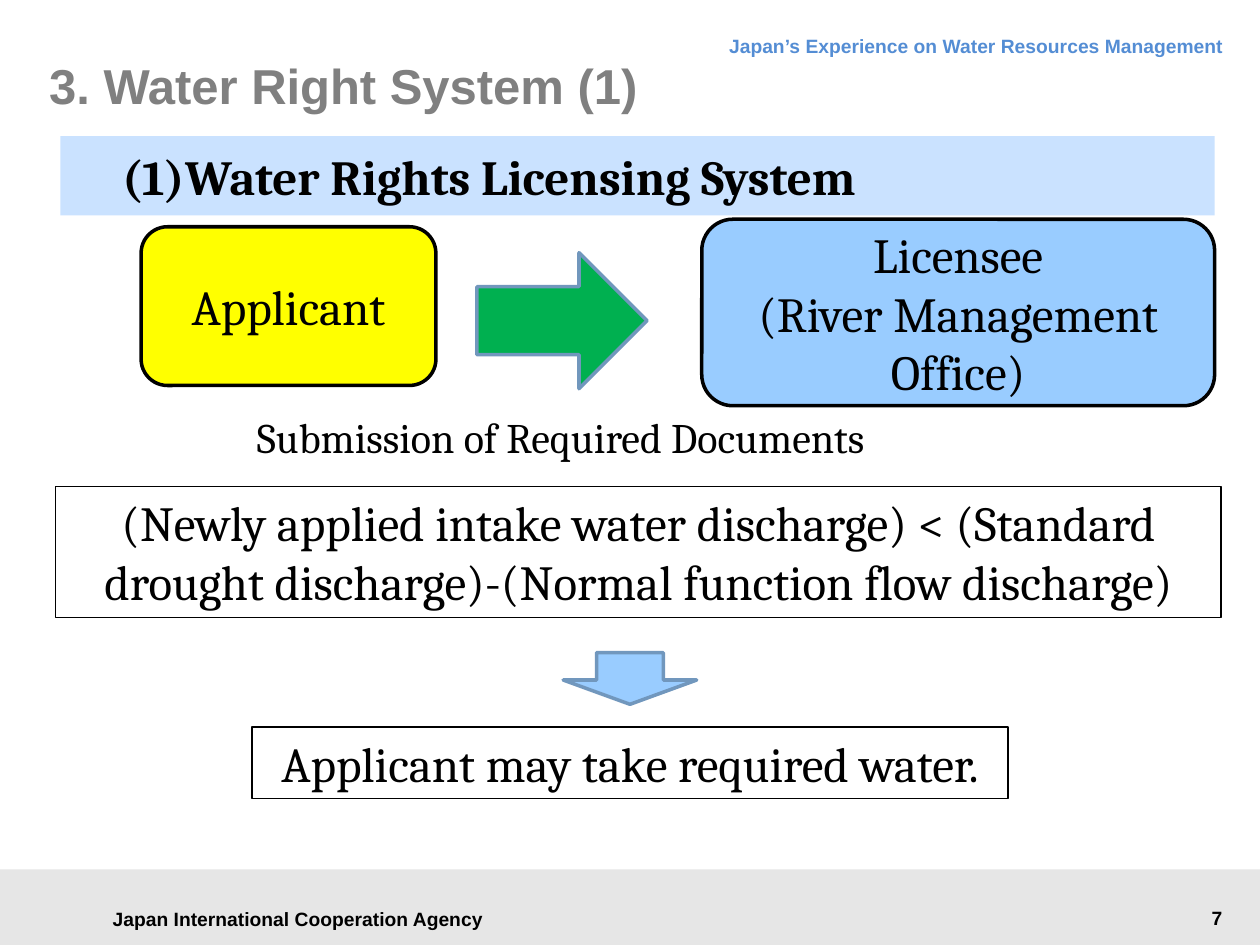
import pptx
import pptx.dml.color
import pptx.enum.shapes
import pptx.enum.text
import pptx.oxml
import pptx.oxml.ns
import pptx.util
from pptx.util import Inches

COLORS = {
    "black": "000000",
    "gray": "808080",
    "footer": "E6E6E6",
    "header": "548DD4",
    "banner": "CAE2FF",
    "sky": "99CCFF",
    "yellow": "FFFF00",
    "green": "00B050",
    "edge": "7197BD",
}
SHAPE = pptx.enum.shapes.MSO_SHAPE
ALIGN = pptx.enum.text.PP_ALIGN
ANCHOR = pptx.enum.text.MSO_ANCHOR
AUTO_SIZE = pptx.enum.text.MSO_AUTO_SIZE
BODY = {"name": "Cambria", "size": 28, "bold": False, "color": "black"}
LABEL = {"name": "Arial", "size": 11, "bold": True, "color": "black"}
MARGINS = (0.1, 0.05, 0.1, 0.05)


class SlideBuilder:
    def __init__(self, page):
        self.page = page

    def color(self, name):
        return pptx.dml.color.RGBColor.from_string(COLORS[name])

    def fill_text(self, box, lines, style=BODY, align=ALIGN.CENTER, anchor=ANCHOR.TOP,
                  margins=MARGINS, spacing=None, tab=None):
        frame = box.text_frame
        left, top, right, bottom = map(Inches, margins)
        frame_format = {
            "word_wrap": True, "auto_size": AUTO_SIZE.NONE, "vertical_anchor": anchor,
            "margin_left": left, "margin_top": top,
            "margin_right": right, "margin_bottom": bottom,
        }
        for name, value in frame_format.items():
            setattr(frame, name, value)
        for index, line in enumerate(lines):
            para = frame.paragraphs[0] if index == 0 else frame.add_paragraph()
            para.alignment = align
            if spacing:
                para.line_spacing = pptx.util.Pt(spacing)
            if tab:
                self.add_tab(para, tab)
            span = para.add_run()
            span.text = line
            font_format = {
                "name": style["name"], "size": pptx.util.Pt(style["size"]),
                "bold": style["bold"],
            }
            for name, value in font_format.items():
                setattr(span.font, name, value)
            span.font.color.rgb = self.color(style["color"])

    def add_tab(self, para, position):
        properties = para._p.get_or_add_pPr()
        properties.set("marL", str(Inches(0.06)))
        properties.set("indent", "0")
        tabs = pptx.oxml.parse_xml(
            f'<a:tabLst {pptx.oxml.ns.nsdecls("a")}>'
            f'<a:tab pos="{Inches(position)}" algn="l"/></a:tabLst>')
        properties.append(tabs)

    def title(self, place, text):
        box = self.page.shapes.title
        for name, value in zip(("left", "top", "width", "height"), place):
            setattr(box, name, Inches(value))
        style = {**LABEL, "size": 28, "color": "gray"}
        self.fill_text(box, [text], style, ALIGN.LEFT, ANCHOR.MIDDLE, (0, 0, 0, 0))

    def text(self, place, text, style, **layout):
        box = self.page.shapes.add_textbox(*map(Inches, place))
        self.fill_text(box, [text], style, **layout)

    def shape(self, kind, place, fill=None, line=None, width=2, lines=(),
              style=BODY, rotation=0, adjustments=(), **layout):
        box = self.page.shapes.add_shape(kind, *map(Inches, place))
        box.shadow.inherit = False
        box.rotation = rotation
        for index, value in enumerate(adjustments):
            box.adjustments[index] = value
        if fill:
            box.fill.solid()
            box.fill.fore_color.rgb = self.color(fill)
        else:
            box.fill.background()
        if line:
            box.line.color.rgb = self.color(line)
            box.line.width = pptx.util.Pt(width)
        else:
            box.line.fill.background()
        if lines:
            self.fill_text(box, lines, style, **layout)


def main():
    deck = pptx.Presentation()
    deck.slide_width, deck.slide_height = Inches(10), Inches(7.5)
    slide = SlideBuilder(deck.slides.add_slide(deck.slide_layouts[5]))

    slide.shape(SHAPE.RECTANGLE, (0, 6.9, 10, 0.6), "footer")
    slide.text((0.71, 7.12, 3.31, 0.34), "Japan International Cooperation Agency", LABEL,
               anchor=ANCHOR.MIDDLE)
    slide.text((2.82, 0.16, 6.99, 0.38), "Japan’s Experience on Water Resources Management",
               {**LABEL, "color": "header"}, align=ALIGN.RIGHT, spacing=18)
    slide.text((8.23, 7.14, 1.57, 0.29), "7", LABEL, align=ALIGN.RIGHT)
    slide.title((0.39, 0.28, 9, 0.79), "3. Water Right System (1)")

    slide.shape(SHAPE.RECTANGLE, (0.48, 1.08, 9.16, 0.63), "banner",
                lines=["(1)\tWater Rights Licensing System"], style={**BODY, "bold": True},
                align=ALIGN.LEFT, anchor=ANCHOR.MIDDLE,
                margins=(0.43, 0.08, 0.35, 0.08), tab=1)

    parties = [
        ((5.57, 1.74, 4.07, 1.48), "sky", ["Licensee", "(River Management Office)"]),
        ((1.12, 1.8, 2.34, 1.26), "yellow", ["Applicant"]),
    ]
    for place, fill, lines in parties:
        slide.shape(SHAPE.ROUNDED_RECTANGLE, place, fill, "black", lines=lines,
                    anchor=ANCHOR.MIDDLE)

    slide.shape(SHAPE.UP_ARROW, (3.92, 1.87, 1.08, 1.35), "green", "edge", rotation=90)
    slide.text((1.94, 3.22, 5.91, 0.5), "Submission of Required Documents",
               {**BODY, "size": 24}, align=ALIGN.LEFT)

    statements = [
        ((0.44, 3.86, 9.25, 1.04), "(Newly applied intake water discharge) < "
         "(Standard drought discharge)-(Normal function flow discharge)"),
        ((2, 5.77, 6, 0.57), "Applicant may take required water."),
    ]
    for place, statement in statements:
        slide.shape(SHAPE.RECTANGLE, place, line="black", width=0.75, lines=[statement])
    slide.shape(SHAPE.DOWN_ARROW, (4.47, 5.18, 1.06, 0.41), "sky", "edge",
                adjustments=(0.5, 0.47))

    deck.save("out.pptx")


if __name__ == "__main__":
    main()
